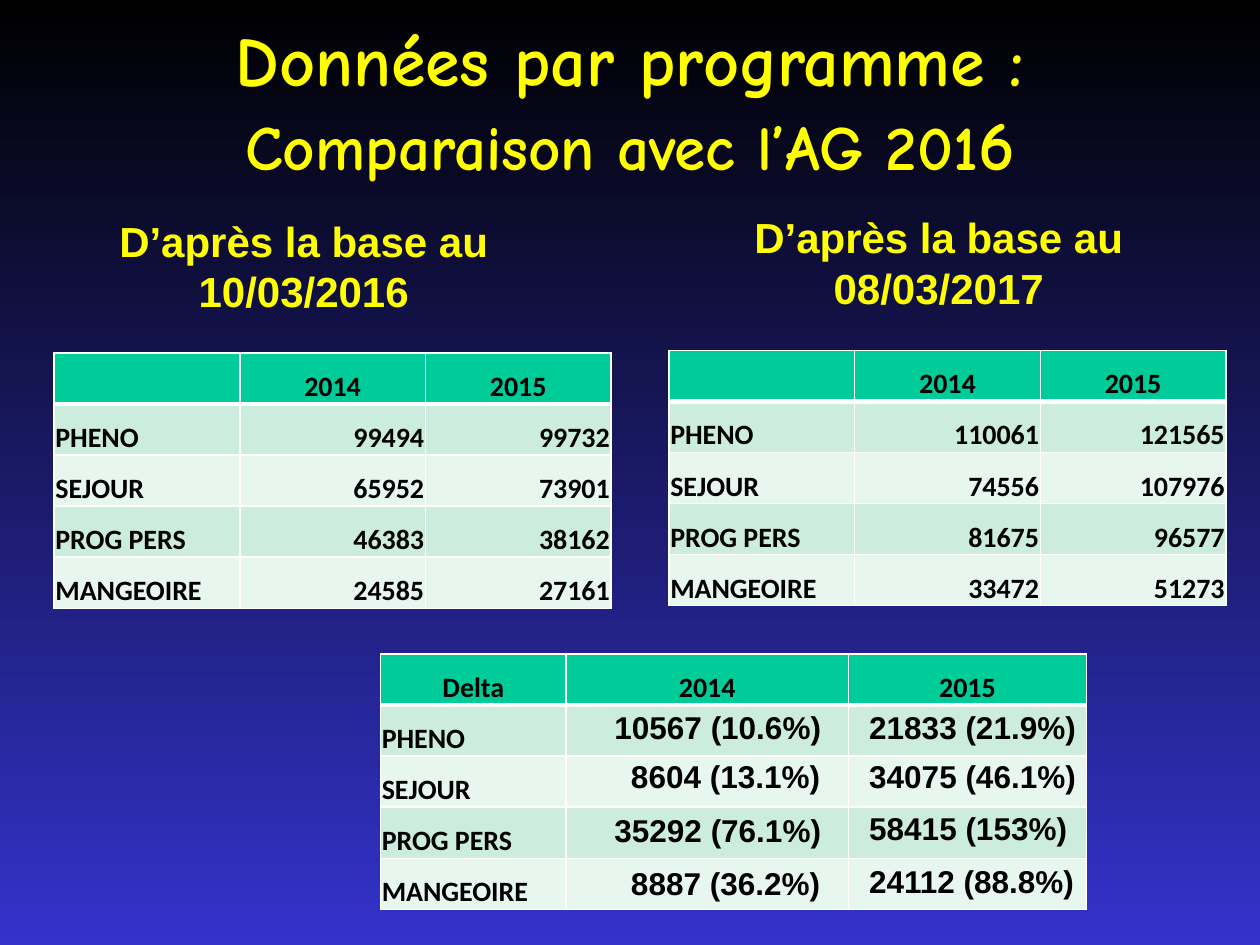
from lxml import etree
from pptx import Presentation
from pptx.dml.color import RGBColor
from pptx.enum import text
from pptx.oxml import parse_xml
from pptx.oxml.ns import nsdecls
from pptx.util import Pt

YELLOW, BLACK, WHITE = "FFFF00", "000000", "FFFFFF"
HEADER, BAND_DARK, BAND_LIGHT = "00CC99", "CCECDE", "E7F6EF"
ALIGN = text.PP_ALIGN


def color(hex_value):
    return RGBColor.from_string(hex_value)


def format_runs(paragraph, name, size, hex_value, shadow=False):
    for run in paragraph.runs:
        run.font.name, run.font.size, run.font.bold = name, Pt(size), True
        run.font.color.rgb = color(hex_value)
        if shadow:
            run.font.fill._xPr.find("{*}solidFill").addnext(parse_xml(
                f'<a:effectLst {nsdecls("a")}><a:outerShdw dist="35921" dir="2700000">'
                f'<a:srgbClr val="{BLACK}"/></a:outerShdw></a:effectLst>'))


presentation = Presentation()
presentation.slide_width, presentation.slide_height = Pt(720), Pt(540)
slide = presentation.slides.add_slide(presentation.slide_layouts[4])

background = slide.background.fill
background.gradient()
background.gradient_angle = 270
for stop, hex_value in zip(background.gradient_stops, (BLACK, "3333CC")):
    stop.color.rgb = color(hex_value)

# Title and the two table headings
title, left_heading, left_content, right_heading, right_content = slide.placeholders
for placeholder in (left_content, right_content):
    placeholder._element.getparent().remove(placeholder._element)

title.left, title.top, title.width, title.height = Pt(36), Pt(12.24), Pt(648), Pt(90)
title.text_frame.auto_size = text.MSO_AUTO_SIZE.NONE
title.text_frame.vertical_anchor = text.MSO_ANCHOR.MIDDLE
paragraph = title.text_frame.paragraphs[0]
paragraph.text = "Données par programme :\vComparaison avec l’AG 201"
paragraph.add_run().text = "6"
paragraph.alignment = ALIGN.CENTER
format_runs(paragraph, "Comic Neue", 40, YELLOW, shadow=True)
paragraph.runs[1].font.size = Pt(36)

for heading, left, top, date in (
    (left_heading, 14.4, 133.92, "10/03/2016"),
    (right_heading, 377.28, 131.76, "08/03/2017"),
):
    heading.left, heading.top, heading.width, heading.height = Pt(left), Pt(top), Pt(318.24), Pt(50.4)
    heading.text_frame.auto_size = text.MSO_AUTO_SIZE.NONE
    heading.text_frame.vertical_anchor = text.MSO_ANCHOR.BOTTOM
    heading.text_frame.text = f"D’après la base au {date}"
    paragraph = heading.text_frame.paragraphs[0]
    paragraph.alignment = ALIGN.CENTER
    format_runs(paragraph, "Arial", 24, YELLOW, shadow=True)

# Tables: left, top, column widths, header, values of each programme
programmes = ["PHENO", "SEJOUR", "PROG PERS", "MANGEOIRE"]
tables = [
    (382.32, 200.16, (106.08,) * 3, "",
     [(110061, 121565), (74556, 107976), (81675, 96577), (33472, 51273)]),
    (30.96, 201.6, (106.08,) * 3, "",
     [(99494, 99732), (65952, 73901), (46383, 38162), (24585, 27161)]),
    (217.44, 373.68, (106.08, 161.28, 136.08), "Delta", [("", "")] * 4),
]
row_height = 29.2
for left, top, widths, corner, values in tables:
    rows = [(corner, 2014, 2015)] + [(name, *pair) for name, pair in zip(programmes, values)]
    table = slide.shapes.add_table(
        len(rows), len(widths), Pt(left), Pt(top), Pt(sum(widths)), Pt(row_height * len(rows))).table
    for column, width in zip(table.columns, widths):
        column.width = Pt(width)
    for row_index, row in enumerate(rows):
        table.rows[row_index].height = Pt(row_height)
        for column_index, value in enumerate(row):
            cell = table.cell(row_index, column_index)
            cell.margin_left = cell.margin_right = cell.margin_top = Pt(0.72)
            cell.margin_bottom = 0
            cell.vertical_anchor = text.MSO_ANCHOR.BOTTOM
            properties = cell._tc.get_or_add_tcPr()
            for side in "LRTB":
                thick = (row_index, side) in ((0, "B"), (1, "T"))
                line = etree.SubElement(properties, properties.tag.replace("tcPr", f"ln{side}"))
                line.set("w", str(Pt(3 if thick else 1)))
                line.append(parse_xml(
                    f'<a:solidFill {nsdecls("a")}><a:srgbClr val="{WHITE}"/></a:solidFill>'))
            cell.fill.solid()
            band = BAND_DARK if row_index % 2 else BAND_LIGHT
            cell.fill.fore_color.rgb = color(band if row_index else HEADER)
            cell.text_frame.text = str(value)
            paragraph = cell.text_frame.paragraphs[0]
            if row_index == 0:
                paragraph.alignment = ALIGN.CENTER
            else:
                paragraph.alignment = ALIGN.RIGHT if column_index else ALIGN.LEFT
            format_runs(paragraph, "Calibri", 16, BLACK)

# Differences laid over the Delta table: left, top, width, wording
differences = [
    (489.6, 401, 134, "21833 (21.9%)"),
    (489.6, 429, 134, "34075 (46.1%)"),
    (489.6, 458.6, 129, "58415 (153%)"),
    (489.6, 489, 132.5, "24112 (88.8%)"),
    (344, 401, 134, "10567 (10.6%)"),
    (353.5, 429, 124, "8604 (13.1%)"),
    (344, 460, 134, "35292 (76.1%)"),
    (353.5, 490.3, 124, "8887 (36.2%)"),
]
for left, top, width, wording in differences:
    box = slide.shapes.add_textbox(Pt(left), Pt(top), Pt(width), Pt(28.8))
    box.text_frame.word_wrap = False
    box.text_frame.auto_size = text.MSO_AUTO_SIZE.SHAPE_TO_FIT_TEXT
    box.text_frame.text = wording
    format_runs(box.text_frame.paragraphs[0], "Arial", 18, BLACK)

presentation.save("out.pptx")
